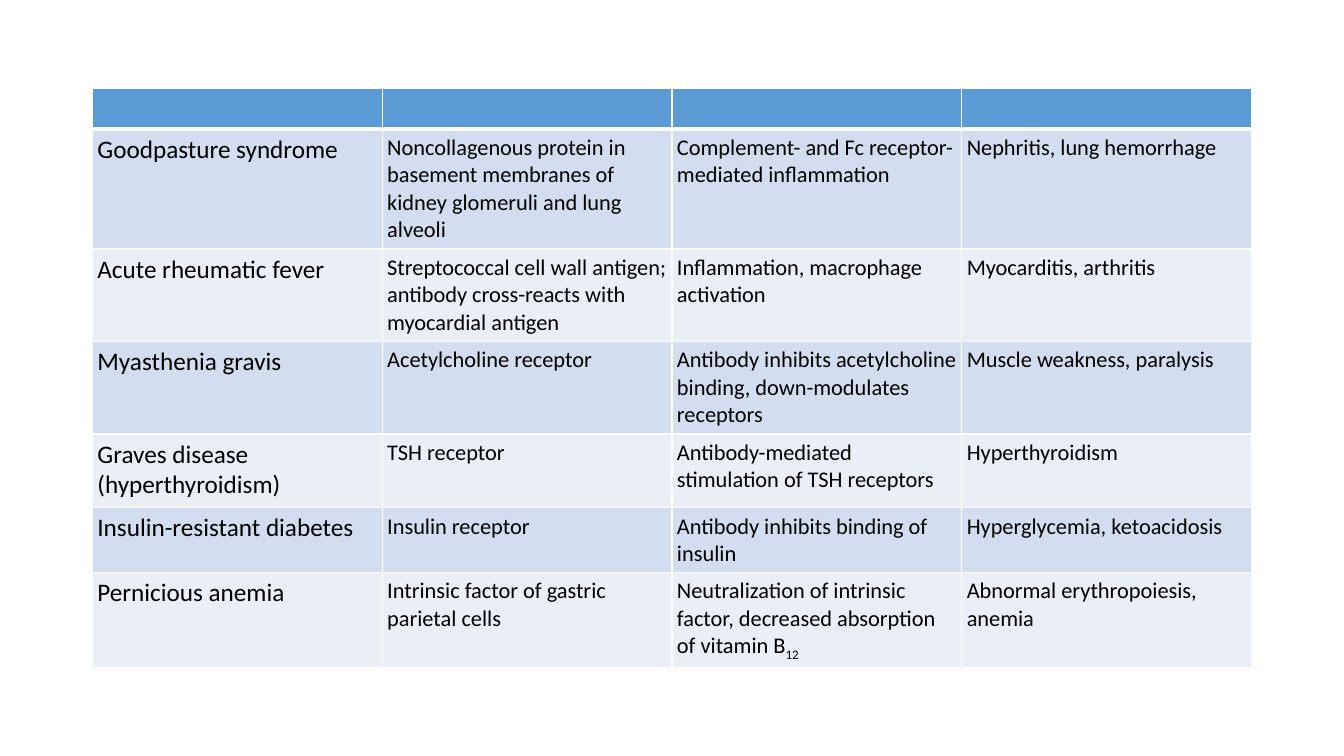
"""Build a slide with a table of antibody-mediated diseases."""
from lxml.etree import SubElement
from pptx import Presentation
from pptx.dml.color import RGBColor
from pptx.enum.text import MSO_VERTICAL_ANCHOR as Anchor
from pptx.oxml.ns import qn
from pptx.util import Pt

COLORS = {
    "header": "5B9BD5",
    "odd": "D2DEEF",
    "even": "EAEFF7",
    "text": "000000",
    "border": "FFFFFF",
}
COLUMN_WIDTH = 207
ROW_HEIGHTS = [28.8, 85.7, 59, 66.2, 52.6, 46.1, 66.2]
DISEASES = [
    ("Goodpasture syndrome",
     "Noncollagenous protein in basement membranes of kidney glomeruli and lung alveoli",
     "Complement- and Fc receptor-mediated inflammation",
     "Nephritis, lung hemorrhage"),
    ("Acute rheumatic fever",
     "Streptococcal cell wall antigen; antibody cross-reacts with myocardial antigen",
     "Inflammation, macrophage activation",
     "Myocarditis, arthritis"),
    ("Myasthenia gravis",
     "Acetylcholine receptor",
     "Antibody inhibits acetylcholine binding, down-modulates receptors",
     "Muscle weakness, paralysis"),
    ("Graves disease (hyperthyroidism)",
     "TSH receptor",
     "Antibody-mediated stimulation of TSH receptors",
     "Hyperthyroidism"),
    ("Insulin-resistant diabetes",
     "Insulin receptor",
     "Antibody inhibits binding of insulin",
     "Hyperglycemia, ketoacidosis"),
    ("Pernicious anemia",
     "Intrinsic factor of gastric parietal cells",
     ("Neutralization of intrinsic factor, decreased absorption of vitamin B", "12"),
     "Abnormal erythropoiesis, anemia"),
]


class SlideBuilder:
    """Hold the table style and the current slide."""

    cell_format = {
        "margin_left": Pt(3.6),
        "margin_right": Pt(3.6),
        "margin_top": Pt(3.6),
        "margin_bottom": Pt(3.6),
        "vertical_anchor": Anchor.TOP,
    }

    def __init__(self, slide, font_name="Calibri"):
        """Keep the slide and the font name."""
        self.slide = slide
        self.font_name = font_name

    def add_table(self, left, top, column_width, row_heights, records):
        """Add a table with an empty header row above the records."""
        column_count = len(records[0])
        frame = self.slide.shapes.add_table(
            len(row_heights), column_count, Pt(left), Pt(top),
            Pt(column_width * column_count), Pt(sum(row_heights)))
        table = frame.table
        for row, height in zip(table.rows, row_heights):
            row.height = Pt(height)
        header = [""] * column_count
        for row_index, record in enumerate([header, *records]):
            for column_index, content in enumerate(record):
                cell = table.cell(row_index, column_index)
                self.format_cell(cell, row_index)
                if content:
                    self.add_text(cell, content, 16 if column_index else 18)

    def format_cell(self, cell, row_index):
        """Apply margins, borders and the banded fill to a cell."""
        for name, value in self.cell_format.items():
            setattr(cell, name, value)
        self.add_borders(cell, {
            "L": 1,
            "R": 1,
            "T": 3 if row_index == 1 else 1,
            "B": 3 if row_index == 0 else 1,
        })
        band = "odd" if row_index % 2 else "even"
        cell.fill.solid()
        cell.fill.fore_color.rgb = RGBColor.from_string(
            COLORS[band if row_index else "header"])

    def add_borders(self, cell, widths):
        """Draw solid borders with the given width for each side."""
        properties = cell._tc.get_or_add_tcPr()
        for side, width in widths.items():
            line = SubElement(properties, qn(f"a:ln{side}"), w=str(Pt(width)))
            fill = SubElement(line, qn("a:solidFill"))
            SubElement(fill, qn("a:srgbClr"), val=COLORS["border"])

    def add_text(self, cell, content, size):
        """Write plain text, or a pair of text and subscript."""
        parts = (content,) if isinstance(content, str) else content
        paragraph = cell.text_frame.paragraphs[0]
        font_format = {"name": self.font_name, "size": Pt(size), "bold": False}
        for index, text in enumerate(parts):
            run = paragraph.add_run()
            run.text = text
            for name, value in font_format.items():
                setattr(run.font, name, value)
            run.font.color.rgb = RGBColor.from_string(COLORS["text"])
            if index:
                run._r.get_or_add_rPr().set("baseline", "-25000")


def main():
    """Create the presentation and save it."""
    presentation = Presentation()
    presentation.slide_width = Pt(960)
    presentation.slide_height = Pt(540)
    slide = presentation.slides.add_slide(presentation.slide_layouts[6])
    SlideBuilder(slide).add_table(66, 63, COLUMN_WIDTH, ROW_HEIGHTS, DISEASES)
    presentation.save("out.pptx")


if __name__ == "__main__":
    main()
